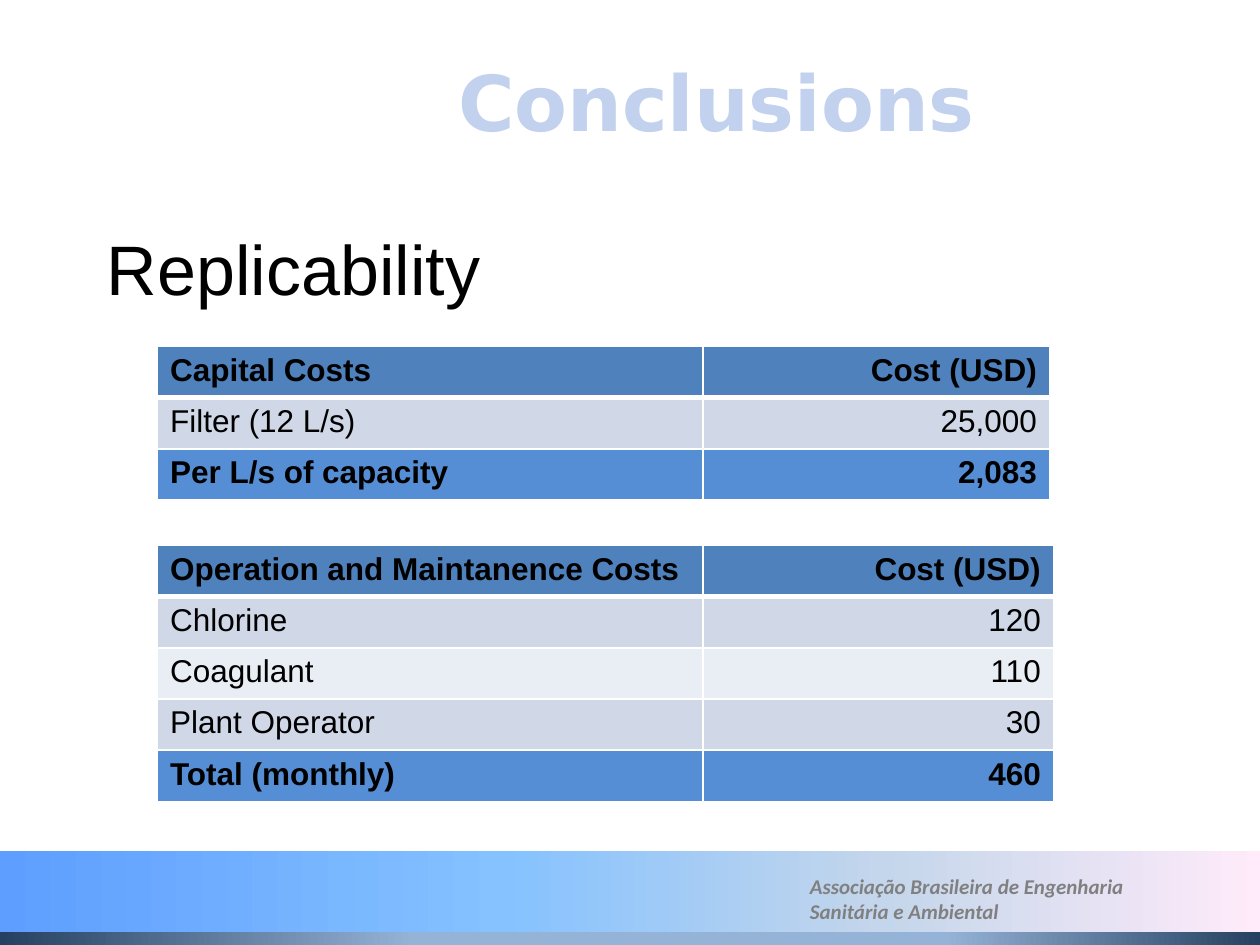
"""Build the Conclusions slide with its two replicability cost tables."""
from lxml.etree import SubElement
from pptx import Presentation
from pptx.dml.color import RGBColor
from pptx.enum.shapes import MSO_SHAPE
from pptx.enum.text import MSO_ANCHOR, PP_ALIGN
from pptx.oxml.ns import qn
from pptx.util import Inches, Pt


def rgb(color):
    return RGBColor.from_string(color)


def add_run(p, text, size, font, color, bold=False, italic=False):
    r = p.add_run()
    r.text = text
    r.font.size = Pt(size)
    r.font.name = font
    r.font.color.rgb = rgb(color)
    r.font.bold = bold
    r.font.italic = italic


prs = Presentation()
prs.slide_width, prs.slide_height = Inches(10), Inches(7.5)
s = prs.slides.add_slide(prs.slide_layouts[6])

bars = [
    (6.75, 0.65, [(0, "5E9EFF"), (40, "85C2FF"), (70, "C4D6EB"), (100, "FFEBFA")]),
    (7.4, 0.1, [(0, "254061"), (33, "95B3D7"), (75, "95B3D7"), (100, "254061")]),
]
for top, height, stops in bars:
    sp = s.shapes.add_shape(MSO_SHAPE.RECTANGLE, 0, Inches(top), Inches(10), Inches(height))
    sp.shadow.inherit = False
    sp.line.fill.background()
    sp.fill.gradient()
    sp.fill.gradient_angle = 0
    gs_list = next(sp._element.spPr.iter(qn("a:gsLst")))
    for gs in list(gs_list):
        gs_list.remove(gs)
    for pos, color in stops:
        gs = SubElement(gs_list, qn("a:gs"), pos=str(pos * 1000))
        SubElement(gs, qn("a:srgbClr"), val=color)

texts = [
    (6.33, 6.88, 3.17, 0.4, MSO_ANCHOR.TOP, PP_ALIGN.LEFT,
     ("Associação Brasileira de Engenharia Sanitária e Ambiental", 12, "Calibri", "808080", True, True)),
    (0.67, 0.17, 7.17, 1.25, MSO_ANCHOR.MIDDLE, PP_ALIGN.RIGHT,
     ("Conclusions", 44, "DejaVu Sans", "C2D1ED", True)),
    (0.75, 1.74, 8.5, 0.9, MSO_ANCHOR.TOP, PP_ALIGN.LEFT,
     ("Replicability", 40, "Arial", "000000")),
]
for left, top, width, height, anchor, align, run in texts:
    tf = s.shapes.add_textbox(Inches(left), Inches(top), Inches(width), Inches(height)).text_frame
    tf.word_wrap = True
    tf.vertical_anchor = anchor
    p = tf.paragraphs[0]
    p.alignment = align
    add_run(p, *run)

tables = [
    (2.75, 2.75, [("Capital Costs", "Cost (USD)"), ("Filter (12 L/s)", "25,000"),
                  ("Per L/s of capacity", "2,083")]),
    (4.33, 2.78, [("Operation and Maintanence Costs", "Cost (USD)"), ("Chlorine", "120"),
                  ("Coagulant", "110"), ("Plant Operator", "30"), ("Total (monthly)", "460")]),
]
row_height = 0.406
for top, cost_width, rows in tables:
    last = len(rows) - 1
    tbl = s.shapes.add_table(len(rows), 2, Inches(1.25), Inches(top), Inches(4.33 + cost_width),
                             Inches(row_height * len(rows))).table
    tbl.columns[0].width, tbl.columns[1].width = Inches(4.33), Inches(cost_width)
    for i, row in enumerate(rows):
        tbl.rows[i].height = Inches(row_height)
        if i == 0:
            fill = "4F81BD"
        elif i == last:
            fill = "558ED5"
        else:
            fill = "D0D8E8" if i % 2 else "E9EDF4"
        for j, text in enumerate(row):
            cell = tbl.cell(i, j)
            tc_pr = cell._tc.get_or_add_tcPr()
            for side in "LRTB":
                heavy = (i, side) in [(0, "B"), (1, "T")]
                ln = SubElement(tc_pr, qn("a:ln" + side), w=str(Pt(3 if heavy else 1)))
                SubElement(SubElement(ln, qn("a:solidFill")), qn("a:srgbClr"), val="FFFFFF")
            cell.fill.solid()
            cell.fill.fore_color.rgb = rgb(fill)
            p = cell.text_frame.paragraphs[0]
            p.alignment = PP_ALIGN.RIGHT if j else PP_ALIGN.LEFT
            add_run(p, text, 18, "Arial", "000000", i in (0, last))

prs.save("out.pptx")
